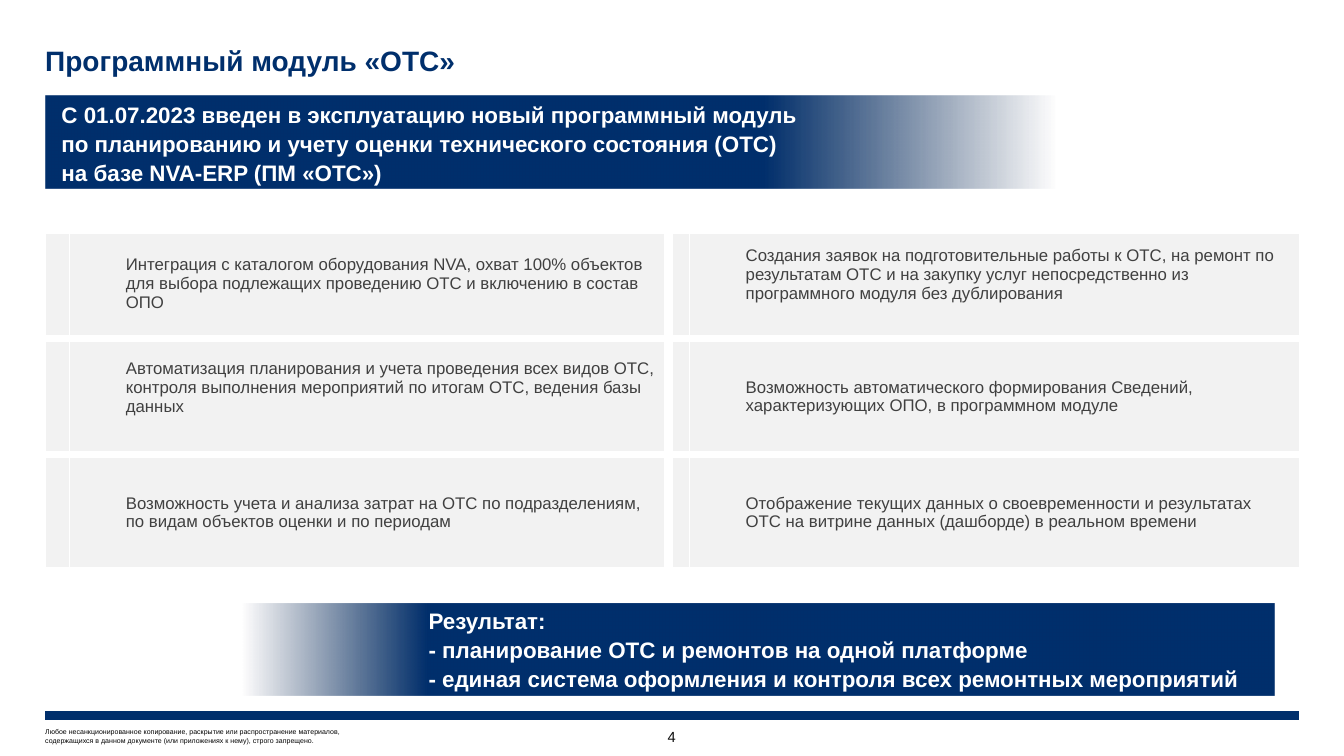
from lxml import etree
from pptx import Presentation
from pptx import util as u
from pptx.dml.color import RGBColor
from pptx.enum import shapes, text
from pptx.oxml import ns

NAVY, DARK_NAVY, WHITE = "002F6C", "001E46", "FFFFFF"
GREY, TEXT_GREY = "F2F2F2", "404040"
LEFT = 1.14


def color(hex_value):
    return RGBColor.from_string(hex_value)


def add_xml(parent, tag, **attributes):
    return etree.SubElement(parent, ns.qn(tag), attributes)


class SlideBuilder:
    """Holds the shared font and the slide being built."""

    font = "Arial"

    def __init__(self, slide):
        self.slide = slide

    def add_text(self, frame, paragraphs, size, hex_value, bold=False,
                 align=None, spacing=None, indent=None):
        """Fill a text frame; a newline inside a paragraph is a line break."""
        for index, content in enumerate(paragraphs):
            paragraph = frame.paragraphs[0] if index == 0 else frame.add_paragraph()
            paragraph.alignment = align
            paragraph.line_spacing = spacing
            if indent:
                properties = paragraph._p.get_or_add_pPr()
                properties.set("marL", str(u.Cm(indent)))
                properties.set("indent", "0")
            for number, line in enumerate(content.split("\n")):
                if number:
                    paragraph.add_line_break()
                run = paragraph.add_run()
                run.text = line
                run.font.name = self.font
                run.font.size = u.Pt(size)
                run.font.bold = bold
                run.font.color.rgb = color(hex_value)

    def prepare(self, frame, top=0):
        frame.margin_left = frame.margin_right = frame.margin_bottom = 0
        frame.margin_top = u.Cm(top)
        frame.vertical_anchor = text.MSO_ANCHOR.MIDDLE
        frame.word_wrap = True

    def title(self, content, left, top, width, height):
        shape = self.slide.shapes.title
        shape.left, shape.top = u.Cm(left), u.Cm(top)
        shape.width, shape.height = u.Cm(width), u.Cm(height)
        self.prepare(shape.text_frame, top=0.1)
        self.add_text(shape.text_frame, [content], 20, NAVY, bold=True,
                      align=text.PP_ALIGN.LEFT, spacing=0.85)

    def text_box(self, paragraphs, left, top, width, height, size, hex_value, **style):
        box = self.slide.shapes.add_textbox(u.Cm(left), u.Cm(top), u.Cm(width), u.Cm(height))
        self.prepare(box.text_frame)
        self.add_text(box.text_frame, paragraphs, size, hex_value, **style)

    def line(self, left, top, right, width):
        connector = self.slide.shapes.add_connector(
            shapes.MSO_CONNECTOR.STRAIGHT, u.Cm(left), u.Cm(top), u.Cm(right), u.Cm(top))
        connector.line.color.rgb = color(NAVY)
        connector.line.width = u.Pt(width)
        add_xml(connector._element.spPr, "a:effectLst")

    def fading_banner(self, left, top, width, height, solid_stops, angle):
        """Navy rectangle that turns transparent after the solid stops."""
        shape = self.slide.shapes.add_shape(
            shapes.MSO_SHAPE.RECTANGLE, u.Cm(left), u.Cm(top), u.Cm(width), u.Cm(height))
        shape.shadow.inherit = False
        shape.line.fill.background()
        shape.fill.gradient()
        gradient = shape._element.spPr.find(ns.qn("a:gradFill"))
        for child in list(gradient):
            gradient.remove(child)
        stops = add_xml(gradient, "a:gsLst")
        for percent in (*solid_stops, 100):
            stop = add_xml(stops, "a:gs", pos=str(percent * 1000))
            faded = percent == 100
            tone = add_xml(stop, "a:srgbClr", val=DARK_NAVY if faded else NAVY)
            if faded:
                add_xml(tone, "a:alpha", val="0")
        add_xml(gradient, "a:lin", ang=str(angle * 60000), scaled="0")

    def table(self, left, top, columns, rows):
        """Add an unstyled table whose empty cells allow very low rows."""
        frame = self.slide.shapes.add_table(
            len(rows), len(columns), u.Cm(left), u.Cm(top),
            u.Cm(sum(columns)), u.Cm(sum(rows)))
        table = frame.table
        table.first_row = table.horz_banding = False
        for column, width in zip(table.columns, columns):
            column.width = u.Cm(width)
        for index, (row, height) in enumerate(zip(table.rows, rows)):
            row.height = u.Cm(height)
            for cell in row.cells:
                cell.margin_top = cell.margin_bottom = 0
                cell.vertical_anchor = text.MSO_ANCHOR.MIDDLE
                cell.text_frame.paragraphs[0].font.size = u.Pt(1)
                self.borders(cell, bottom=3 if index == 0 else 1)
                cell.fill.background()
        return table

    def borders(self, cell, bottom):
        properties = cell._tc.get_or_add_tcPr()
        for side, width in zip("LRTB", (1, 1, 1, bottom)):
            border = add_xml(properties, f"a:ln{side}", w=str(u.Pt(width)))
            add_xml(add_xml(border, "a:solidFill"), "a:srgbClr", val=WHITE)

    def fill_cell(self, cell, hex_value):
        cell.fill.solid()
        cell.fill.fore_color.rgb = color(hex_value)


# Each cell: paragraphs and the bottom margin that lifts the text
FEATURES = [
    [(["Интеграция с каталогом оборудования NVA, охват 100% объектов",
       "для выбора подлежащих проведению ОТС и включению в состав ОПО"], 0),
     (["Создания заявок на подготовительные работы к ОТС, на ремонт по результатам ОТС "
       "и на закупку услуг непосредственно из программного модуля без дублирования"], 0.46)],
    [(["Автоматизация планирования и учета проведения всех видов ОТС, контроля выполнения "
       "мероприятий по итогам ОТС, ведения базы данных"], 0.46),
     (["Возможность автоматического формирования Сведений, характеризующих ОПО, "
       "в программном модуле"], 0)],
    [(["Возможность учета и анализа затрат на ОТС по подразделениям,",
       "по видам объектов оценки и по периодам"], 0),
     (["Отображение текущих данных о своевременности и результатах ОТС "
       "на витрине данных (дашборде) в реальном времени"], 0)],
]


def add_features(builder):
    gap = 0.15
    table = builder.table(LEFT, 5.69, [0.08, 15.62, 15.39], [gap, 2.62, gap, 2.77, gap, 2.77])
    for index, features in enumerate(FEATURES):
        edge, *cells = table.rows[2 * index + 1].cells
        builder.fill_cell(edge, GREY)
        for cell, (paragraphs, lift) in zip(cells, features):
            builder.fill_cell(cell, GREY)
            cell.margin_bottom = u.Cm(lift)
            builder.add_text(cell.text_frame, paragraphs, 12, TEXT_GREY, indent=1.17)


def add_column_divider(builder):
    heights = [1.3, 1.32, 1.22, 1.09, 0.84, 1.47, 0.13, 0.48, 0.13, 0.1, 0.13, 0.81]
    table = builder.table(16.74, 5.28, [0.2], heights)
    for cell in table.iter_cells():
        cell.margin_left = cell.margin_right = 0
        builder.fill_cell(cell, WHITE)


def main():
    presentation = Presentation()
    presentation.slide_width, presentation.slide_height = u.Cm(33.87), u.Cm(19.05)
    slide = presentation.slides.add_slide(presentation.slide_layouts[5])
    builder = SlideBuilder(slide)
    banner_style = {"size": 16, "hex_value": WHITE, "bold": True, "spacing": 1.08}

    builder.text_box(
        ["Любое несанкционированное копирование, раскрытие или распространение материалов,\n"
         "содержащихся в данном документе (или приложениях к нему), строго запрещено."],
        LEFT, 18.34, 13, 0.43, 5, "000000")
    builder.line(LEFT, 18.03, 32.74, 6)
    builder.title("Программный модуль «ОТС»", LEFT, 1.12, 28.83, 0.84)
    builder.text_box(["4"], 16.03, 18.24, 1.8, 0.64, 10.5, "0D0D0D",
                     align=text.PP_ALIGN.CENTER)
    add_features(builder)
    builder.fading_banner(LEFT, 2.41, 25.45, 2.34, (0, 71), 0)
    builder.text_box(
        ["С 01.07.2023 введен в эксплуатацию новый программный модуль",
         "по планированию и учету оценки технического состояния (ОТС)",
         "на базе NVA-ERP (ПМ «ОТС»)"],
        1.55, 2.57, 19.5, 2.06, **banner_style)
    add_column_divider(builder)
    builder.fading_banner(6.12, 15.21, 26.01, 2.31, (53, 82), 180)
    builder.text_box(
        ["Результат:",
         "- планирование ОТС и ремонтов на одной платформе",
         "- единая система оформления и контроля всех ремонтных мероприятий"],
        10.8, 15.32, 20.8, 2.06, **banner_style)
    presentation.save("out.pptx")


if __name__ == "__main__":
    main()
